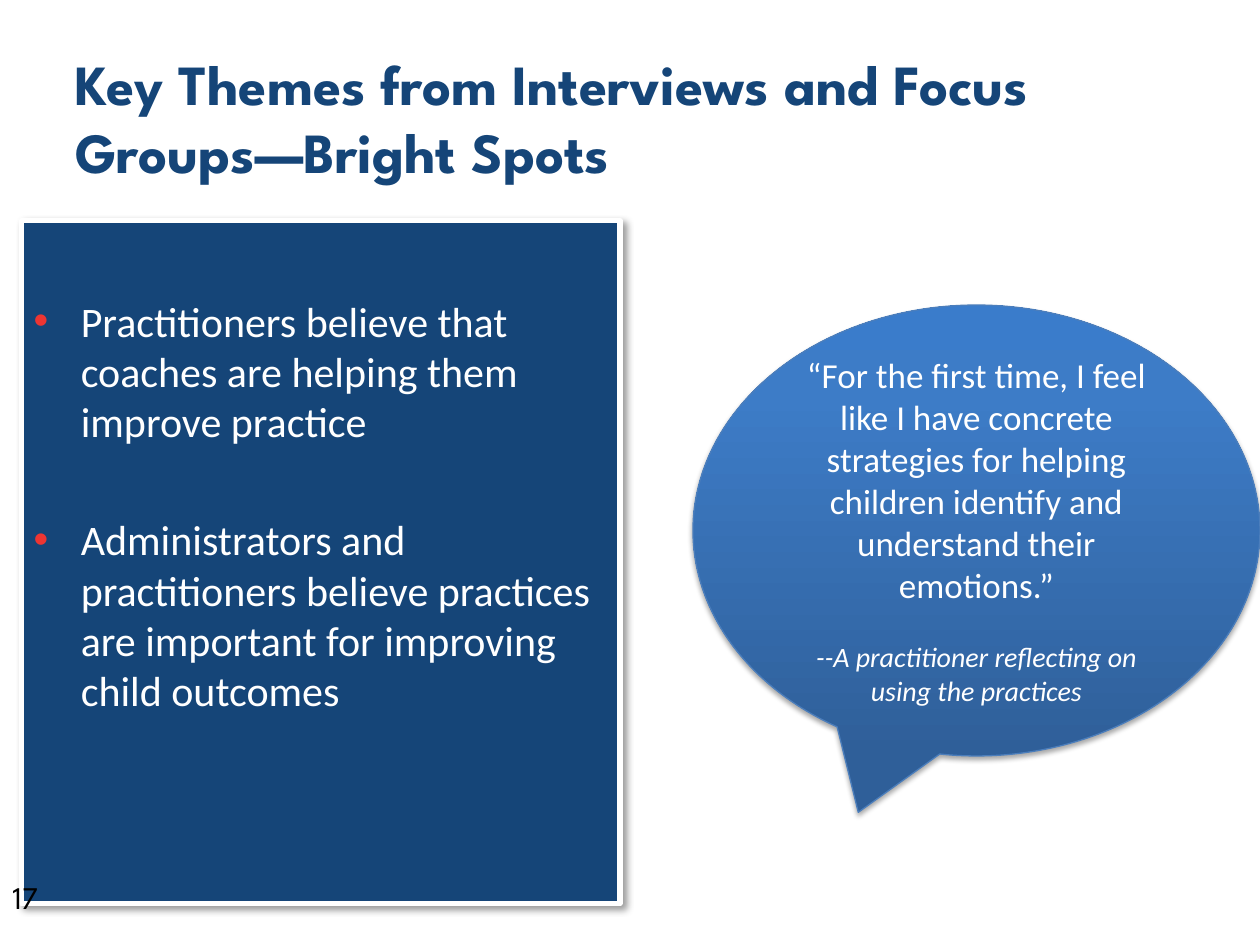
"""Build the slide on bright spots from interviews and focus groups."""
from copy import deepcopy

from lxml.etree import SubElement
from pptx import Presentation
from pptx.dml.color import RGBColor
from pptx.enum.shapes import MSO_SHAPE
from pptx.enum.text import MSO_ANCHOR, PP_ALIGN
from pptx.oxml.ns import qn
from pptx.util import Cm, Pt

NAVY, WHITE, RED = "154578", "FFFFFF", "ED3532"
HEADING, BODY = "League Spartan", "Calibri"


def color(value):
    return RGBColor.from_string(value)


def add_bullet(paragraph, hue, indent):
    properties = paragraph._p.get_or_add_pPr()
    properties.set("marL", str(indent))
    properties.set("indent", str(-indent))
    SubElement(SubElement(properties, qn("a:buClr")), qn("a:srgbClr"), val=hue)
    SubElement(properties, qn("a:buFont"), typeface="Arial")
    SubElement(properties, qn("a:buChar"), char="•")


def write(frame, text, *, size, hue=WHITE, font=BODY, bold=False, italic=False,
          align=PP_ALIGN.LEFT, before=0, bullet=None):
    first = frame.paragraphs[0]
    paragraph = frame.add_paragraph() if first.runs else first
    paragraph.alignment = align
    paragraph.space_before = Pt(before)
    if bullet:
        add_bullet(paragraph, bullet, Cm(0.95))
    run = paragraph.add_run()
    run.text = text
    run.font.name, run.font.size = font, Pt(size)
    run.font.bold, run.font.italic = bold, italic
    run.font.color.rgb = color(hue)


class SlideBuilder:
    def __init__(self, slide):
        self.slide = slide

    def text(self, *box, anchor=MSO_ANCHOR.TOP):
        frame = self.slide.shapes.add_textbox(*map(Cm, box)).text_frame
        frame.word_wrap = True
        frame.vertical_anchor = anchor
        return frame

    def shape(self, kind, *box, line, width, anchor=MSO_ANCHOR.TOP):
        shape = self.slide.shapes.add_shape(kind, *map(Cm, box))
        shape.line.color.rgb = color(line)
        shape.line.width = Pt(width)
        shape.text_frame.word_wrap = True
        shape.text_frame.vertical_anchor = anchor
        return shape

    def shadow(self, shape, opacity, blur, distance, angle):
        shape.shadow.inherit = False
        effects = shape._element.spPr.find(qn("a:effectLst"))
        outer = SubElement(effects, qn("a:outerShdw"), blurRad=str(Pt(blur)),
                           dist=str(Pt(distance)), dir=str(angle * 60000),
                           rotWithShape="0")
        black = SubElement(outer, qn("a:srgbClr"), val="000000")
        SubElement(black, qn("a:alpha"), val=str(opacity * 1000))

    def gradient(self, shape, stops, angle):
        shape.fill.gradient()
        shape.fill.gradient_angle = angle
        stop_list = next(shape._element.spPr.iter(qn("a:gsLst")))
        while len(stop_list) < len(stops):
            stop_list.append(deepcopy(stop_list[-1]))
        for stop, (position, hue) in zip(shape.fill.gradient_stops, stops):
            stop.position = position
            stop.color.rgb = color(hue)


def main():
    presentation = Presentation()
    presentation.slide_width, presentation.slide_height = Cm(25.4), Cm(19.05)
    slide = presentation.slides.add_slide(presentation.slide_layouts[6])
    builder = SlideBuilder(slide)

    title = builder.text(1.27, 0.76, 22.86, 3.18, anchor=MSO_ANCHOR.MIDDLE)
    write(title, "Key Themes from Interviews and Focus Groups—Bright Spots",
          size=32.4, hue=NAVY, font=HEADING, bold=True)

    themes = builder.shape(MSO_SHAPE.RECTANGLE, 0.43, 4.45, 12.07, 13.77,
                           line=WHITE, width=3)
    themes.fill.solid()
    themes.fill.fore_color.rgb = color(NAVY)
    builder.shadow(themes, opacity=40, blur=4, distance=3, angle=45)
    themes.text_frame.margin_top = Cm(1.5)
    findings = (
        "Practitioners believe that coaches are helping them improve practice",
        "Administrators and practitioners believe practices are important "
        "for improving child outcomes",
    )
    for index, finding in enumerate(findings):
        write(themes.text_frame, finding, size=24, before=38.5 * index, bullet=RED)

    page_number = builder.text(0, 17.58, 5.92, 1.02)
    write(page_number, "17", size=18, hue="000000", font=HEADING)

    quote = builder.shape(MSO_SHAPE.OVAL_CALLOUT, 13.97, 6.15, 11.43, 9.09,
                          line="4B7EBC", width=0.75, anchor=MSO_ANCHOR.MIDDLE)
    builder.gradient(quote, ((0, "2F5F99"), (0.8, "3D7CC7"), (1, "3A7CCB")), angle=90)
    builder.shadow(quote, opacity=35, blur=3.1, distance=1.8, angle=90)
    write(quote.text_frame,
          "“For the first time, I feel like I have concrete strategies for helping "
          "children identify and understand their emotions.”",
          size=20, align=PP_ALIGN.CENTER)
    write(quote.text_frame, "--A practitioner reflecting on using the practices",
          size=16, italic=True, align=PP_ALIGN.CENTER, before=19.5)

    presentation.save("out.pptx")


if __name__ == "__main__":
    main()
